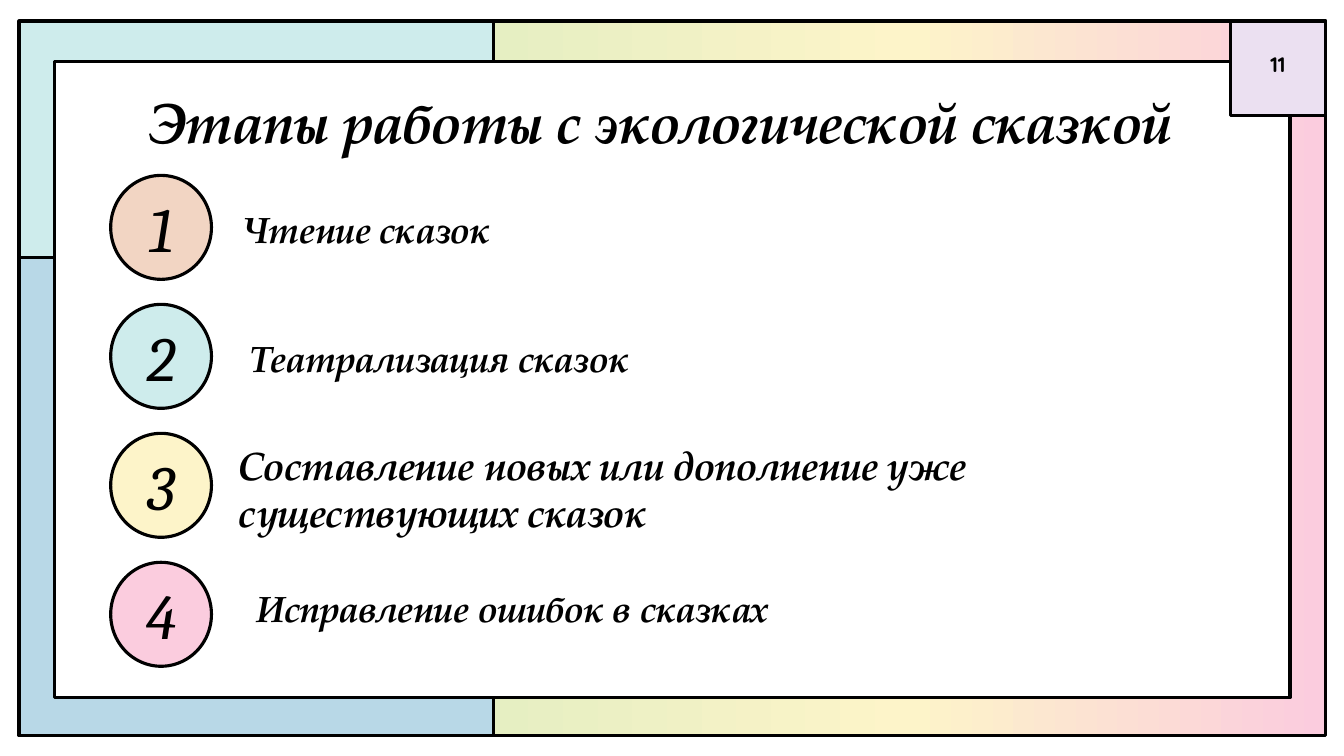
"""Build the slide on the stages of working with an ecological tale."""
from copy import deepcopy
from dataclasses import dataclass
from typing import Optional

from pptx import Presentation
from pptx.dml.color import RGBColor as Rgb
from pptx.enum.shapes import MSO_SHAPE as Preset
from pptx.enum.text import MSO_ANCHOR as Anchor, PP_ALIGN as Align
from pptx.oxml.ns import qn
from pptx.shapes.autoshape import Shape
from pptx.slide import Slide
from pptx.util import Cm, Pt


@dataclass(frozen=True)
class Theme:
    ink: Rgb = Rgb.from_string("000000")
    paper: Rgb = Rgb.from_string("FFFFFF")
    mint: Rgb = Rgb.from_string("CEECEC")
    blue: Rgb = Rgb.from_string("B8D8E7")
    green: Rgb = Rgb.from_string("E6EFC2")
    yellow: Rgb = Rgb.from_string("FDF4C9")
    pink: Rgb = Rgb.from_string("FBCCDE")
    lilac: Rgb = Rgb.from_string("EBE0F1")
    peach: Rgb = Rgb.from_string("F2D5C3")
    outline: float = 2.25
    heading_size: int = 40
    step_size: int = 26
    long_step_size: int = 28
    numeral_size: int = 45
    page_size: int = 15


THEME = Theme()


@dataclass(frozen=True)
class Box:
    left: float
    top: float
    width: float
    height: float

    def lengths(self) -> tuple[Cm, Cm, Cm, Cm]:
        return Cm(self.left), Cm(self.top), Cm(self.width), Cm(self.height)


@dataclass(frozen=True)
class Style:
    size: int
    font: str = "TeX Gyre Pagella"
    bold: bool = True
    italic: bool = True
    align: Align = Align.CENTER
    anchor: Anchor = Anchor.TOP
    inset: float = 0.33


@dataclass(frozen=True)
class Panel:
    box: Box
    color: Optional[Rgb]


@dataclass(frozen=True)
class Step:
    wording: str
    box: Box
    color: Rgb
    style: Style


HEADING = Style(THEME.heading_size)
SHORT_STEP = Style(THEME.step_size)
LONG_STEP = Style(THEME.long_step_size, align=Align.LEFT)
NUMERAL = Style(THEME.numeral_size, "Cambria", bold=False, anchor=Anchor.MIDDLE, inset=0.25)
PAGE = Style(THEME.page_size, "Quicksand", italic=False)

PANELS = [
    Panel(Box(0.48, 0.53, 11.96, 5.97), THEME.mint),
    Panel(Box(0.48, 6.5, 11.96, 12.04), THEME.blue),
    Panel(Box(12.44, 0.53, 20.96, 18.01), None),
    Panel(Box(1.37, 1.55, 31.14, 16.03), THEME.paper),
    Panel(Box(31.01, 0.53, 2.39, 2.39), THEME.lilac),
]

STEPS = [
    Step("Чтение сказок", Box(5.33, 4.9, 7.8, 1.7), THEME.peach, SHORT_STEP),
    Step("Театрализация сказок", Box(5.33, 8.15, 11.48, 1.93), THEME.mint, SHORT_STEP),
    Step("Составление новых или дополнение уже существующих сказок",
         Box(5.69, 10.8, 19.61, 1.93), THEME.yellow, LONG_STEP),
    Step("Исправление ошибок в сказках", Box(4.93, 14.45, 15.98, 1.93), THEME.pink, SHORT_STEP),
]
FIRST_CIRCLE = Box(2.79, 4.42, 2.54, 2.62)
CIRCLE_PITCH = 3.25


def write(holder: Shape, wording: str, style: Style) -> None:
    frame = holder.text_frame
    frame.word_wrap = True
    frame.vertical_anchor = style.anchor
    frame.margin_left = frame.margin_right = Cm(style.inset)
    frame.margin_top = frame.margin_bottom = Cm(style.inset)
    paragraph = frame.paragraphs[0]
    paragraph.alignment = style.align
    run = paragraph.add_run()
    run.text = wording
    run.font.name = style.font
    run.font.size = Pt(style.size)
    run.font.bold = style.bold
    run.font.italic = style.italic
    run.font.color.rgb = THEME.ink


def add_wording(slide: Slide, wording: str, box: Box, style: Style) -> None:
    write(slide.shapes.add_textbox(*box.lengths()), wording, style)


def fill_with_gradient(panel: Shape, colors: list[Rgb]) -> None:
    panel.fill.gradient()
    panel.fill.gradient_angle = 0
    first_stop = panel._element.spPr.find(qn("a:gradFill")).find(qn("a:gsLst"))[0]
    first_stop.addnext(deepcopy(first_stop))
    for index, (stop, color) in enumerate(zip(panel.fill.gradient_stops, colors)):
        stop.position = index / (len(colors) - 1)
        stop.color.rgb = color


def add_outlined(slide: Slide, preset: Preset, box: Box, color: Optional[Rgb]) -> Shape:
    outlined = slide.shapes.add_shape(preset, *box.lengths())
    outlined.shadow.inherit = False
    outlined.line.color.rgb = THEME.ink
    outlined.line.width = Pt(THEME.outline)
    if color is None:
        fill_with_gradient(outlined, [THEME.green, THEME.yellow, THEME.pink])
    else:
        outlined.fill.solid()
        outlined.fill.fore_color.rgb = color
    return outlined


def add_step(slide: Slide, index: int, step: Step) -> None:
    circle_box = Box(FIRST_CIRCLE.left, FIRST_CIRCLE.top + index * CIRCLE_PITCH,
                     FIRST_CIRCLE.width, FIRST_CIRCLE.height)
    circle = add_outlined(slide, Preset.OVAL, circle_box, step.color)
    write(circle, str(index + 1), NUMERAL)
    add_wording(slide, step.wording, step.box, step.style)


def main() -> None:
    deck = Presentation()
    deck.slide_width, deck.slide_height = Cm(33.87), Cm(19.05)
    slide = deck.slides.add_slide(deck.slide_layouts[6])
    for panel in PANELS:
        add_outlined(slide, Preset.RECTANGLE, panel.box, panel.color)
    add_wording(slide, "Этапы работы с экологической сказкой",
                Box(2.03, 1.88, 29.16, 2.11), HEADING)
    for index, step in enumerate(STEPS):
        add_step(slide, index, step)
    add_wording(slide, "11", Box(31.19, 0.99, 2.03, 1.45), PAGE)
    deck.save("out.pptx")


if __name__ == "__main__":
    main()
